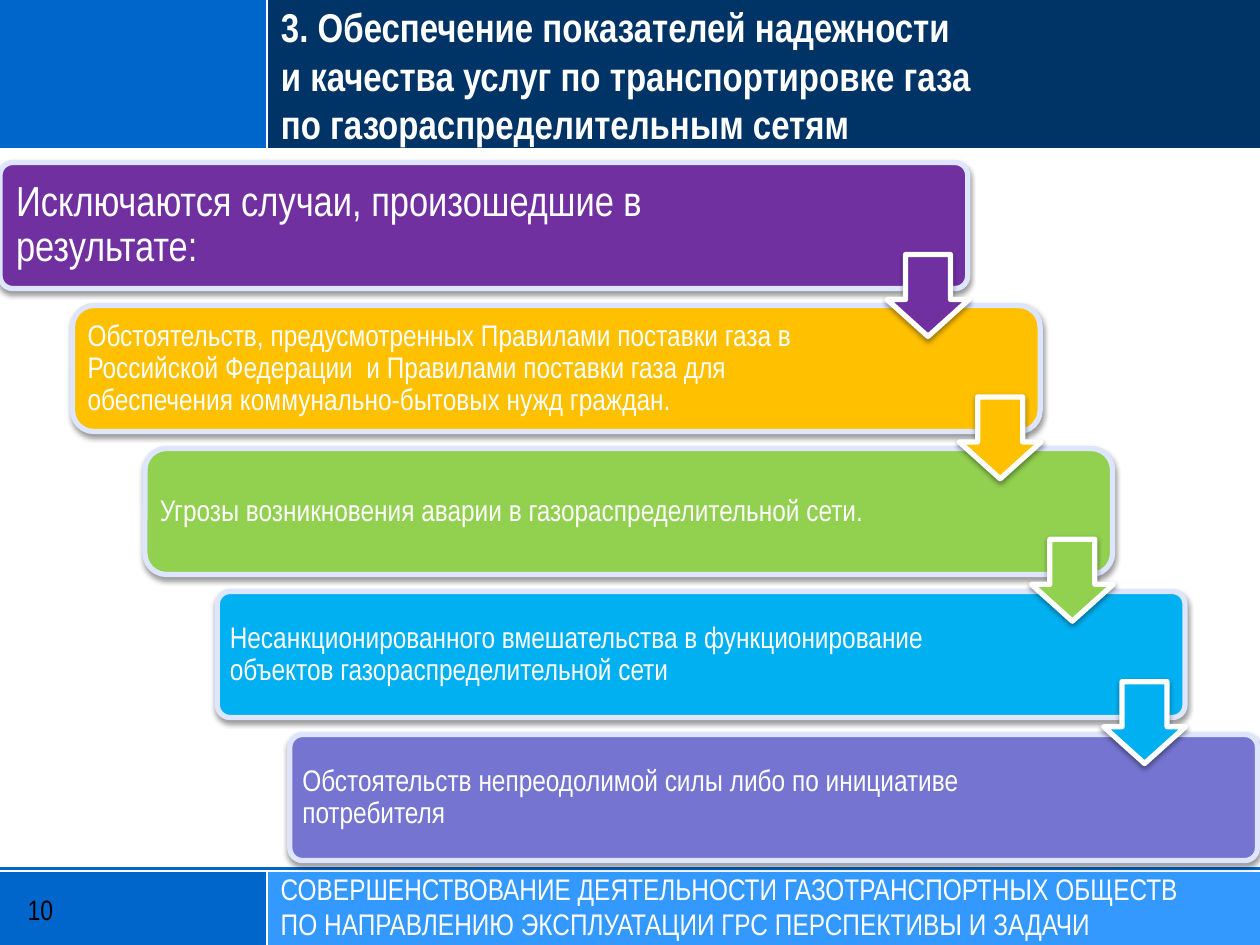
from lxml import etree
from pptx import Presentation
from pptx.dml.color import RGBColor
from pptx.enum import shapes, text
from pptx.oxml.ns import qn
from pptx.util import Inches, Pt

TITLE = ["3. Обеспечение показателей надежности",
         "и качества услуг по транспортировке газа",
         "по газораспределительным сетям"]
FOOTER = ["СОВЕРШЕНСТВОВАНИЕ ДЕЯТЕЛЬНОСТИ ГАЗОТРАНСПОРТНЫХ ОБЩЕСТВ",
          "ПО НАПРАВЛЕНИЮ ЭКСПЛУАТАЦИИ ГРС ПЕРСПЕКТИВЫ И ЗАДАЧИ"]
PAGE_NUMBER = "10"
# text, fill, type size, corner rounding, left inset, right inset
STEPS = [
    ("Исключаются случаи, произошедшие в результате:",
     "7030A0", 24, 0.1, 0.1, 1.23),
    ("Обстоятельств, предусмотренных Правилами поставки газа в Российской "
     "Федерации  и Правилами поставки газа для обеспечения "
     "коммунально-бытовых нужд граждан.", "FFC000", 17, 0.17, 0.07, 1.28),
    ("Угрозы возникновения аварии в газораспределительной сети.",
     "92D050", 17, 0.17, 0.07, 1.28),
    ("Несанкционированного вмешательства в функционирование объектов "
     "газораспределительной сети", "00B0F0", 17, 0.1, 0.07, 1.29),
    ("Обстоятельств непреодолимой силы либо по инициативе потребителя",
     "7575D1", 17, 0.1, 0.07, 1.29),
]
THEME = {
    "font": "Arial Narrow", "white": "FFFFFF", "black": "000000",
    "background": "0066CC", "header": "003366", "footer": "3399FF",
    "step_line": "DDE5FF",
    "title_size": 23, "footer_size": 17, "number_size": 16,
    "rule_width": 1.25, "outline_width": 3,
}
WIDTH, HEIGHT = 10, 7.5
SPLIT, HEADER_BOTTOM, FOOTER_TOP = 2.12, 1.18, 6.91
BANDS = [
    (SPLIT, FOOTER_TOP, WIDTH - SPLIT, HEIGHT - FOOTER_TOP, "footer"),
    (0, 0, SPLIT, HEADER_BOTTOM, "background"),
    (SPLIT, 0, WIDTH - SPLIT, HEADER_BOTTOM, "header"),
    (0, HEADER_BOTTOM, WIDTH, 5.7, "white"),
]
RULES = [
    (SPLIT, FOOTER_TOP, SPLIT, HEIGHT), (SPLIT, 0, SPLIT, HEADER_BOTTOM),
    (0, FOOTER_TOP, WIDTH, FOOTER_TOP),
    (0, HEADER_BOTTOM, WIDTH, HEADER_BOTTOM),
]
STEP_TOP, STEP_W, STEP_H = 1.29, 7.68, 1
STEP_DX, STEP_DY = 0.575, 1.135
ARROW_X, ARROW_Y, ARROW_SIZE = 7.04, 2.02, 0.65
ARROW_DX, ARROW_DY = 0.573, 1.13


def rgb(value):
    return RGBColor.from_string(value)


def inches(*values):
    return [Inches(value) for value in values]


def add_shadow(shape):
    """Soft shadow just below the shape."""
    effects = etree.SubElement(shape._element.spPr, qn("a:effectLst"))
    shadow = etree.SubElement(effects, qn("a:outerShdw"), blurRad=str(Pt(3.1)),
                              dist=str(Pt(1.6)), dir="5400000", rotWithShape="0")
    color = etree.SubElement(shadow, qn("a:srgbClr"), val=THEME["black"])
    etree.SubElement(color, qn("a:alpha"), val="38000")


def add_block(slide, kind, box, fill, line=None, adjustments=()):
    shape = slide.shapes.add_shape(kind, *inches(*box))
    shape.fill.solid()
    shape.fill.fore_color.rgb = rgb(fill)
    for index, value in enumerate(adjustments):
        shape.adjustments[index] = value
    if line:
        shape.line.color.rgb = rgb(line)
        shape.line.width = Pt(THEME["outline_width"])
        add_shadow(shape)
    else:
        shape.line.fill.background()
        shape.shadow.inherit = False
    return shape


def add_rule(slide, x1, y1, x2, y2):
    rule = slide.shapes.add_connector(shapes.MSO_CONNECTOR.STRAIGHT,
                                      *inches(x1, y1, x2, y2))
    rule.line.color.rgb = rgb(THEME["white"])
    rule.line.width = Pt(THEME["rule_width"])
    etree.SubElement(rule._element.spPr, qn("a:effectLst"))


def write(shape, content, size, color="white", bold=False, spacing=1.0,
          insets=(0.1, 0.05, 0.1, 0.05), anchor=text.MSO_ANCHOR.MIDDLE):
    frame = shape.text_frame
    frame.text = content
    left, top, right, bottom = inches(*insets)
    frame_format = {
        "word_wrap": True, "auto_size": text.MSO_AUTO_SIZE.NONE,
        "vertical_anchor": anchor, "margin_left": left, "margin_top": top,
        "margin_right": right, "margin_bottom": bottom,
    }
    for name, value in frame_format.items():
        setattr(frame, name, value)
    font_format = {"name": THEME["font"], "size": Pt(size), "bold": bold}
    for paragraph in frame.paragraphs:
        paragraph.alignment = text.PP_ALIGN.LEFT
        paragraph.line_spacing = spacing
        for run in paragraph.runs:
            for name, value in font_format.items():
                setattr(run.font, name, value)
            run.font.color.rgb = rgb(THEME[color])


def add_steps(slide):
    for i, (words, fill, size, rounding, left, right) in enumerate(STEPS):
        box = (i * STEP_DX, STEP_TOP + i * STEP_DY, STEP_W, STEP_H)
        step = add_block(slide, shapes.MSO_SHAPE.ROUNDED_RECTANGLE, box, fill,
                         THEME["step_line"], [rounding])
        write(step, words, size, spacing=0.9, insets=(left, left, right, left))
    for i, (_, fill, *_) in enumerate(STEPS[:-1]):
        box = (ARROW_X + i * ARROW_DX, ARROW_Y + i * ARROW_DY,
               ARROW_SIZE, ARROW_SIZE)
        # The head length comes first, then the shaft width.
        add_block(slide, shapes.MSO_SHAPE.DOWN_ARROW, box, fill,
                  THEME["white"], [0.55, 0.45])


def place_title(slide):
    title = slide.shapes.title
    title.left, title.top, title.width, title.height = inches(2.13, -0.03, 7.85, 1.26)
    write(title, "\v".join(TITLE), THEME["title_size"], bold=True,
          anchor=text.MSO_ANCHOR.TOP)
    slide.shapes._spTree.append(title._element)  # in front of the header band


def main():
    presentation = Presentation()
    presentation.slide_width, presentation.slide_height = inches(WIDTH, HEIGHT)
    slide = presentation.slides.add_slide(presentation.slide_layouts[5])
    slide.background.fill.solid()
    slide.background.fill.fore_color.rgb = rgb(THEME["background"])

    for *box, color in BANDS:
        add_block(slide, shapes.MSO_SHAPE.RECTANGLE, box, THEME[color])
    for rule in RULES:
        add_rule(slide, *rule)

    number = slide.shapes.add_textbox(*inches(0.22, 6.96, 1.63, 0.52))
    write(number, PAGE_NUMBER, THEME["number_size"], "black", insets=(0, 0, 0, 0))
    footer = slide.shapes.add_textbox(*inches(2.13, 6.86, 7.87, 0.67))
    write(footer, "\n".join(FOOTER), THEME["footer_size"],
          anchor=text.MSO_ANCHOR.TOP)
    add_steps(slide)
    place_title(slide)
    presentation.save("out.pptx")


if __name__ == "__main__":
    main()
